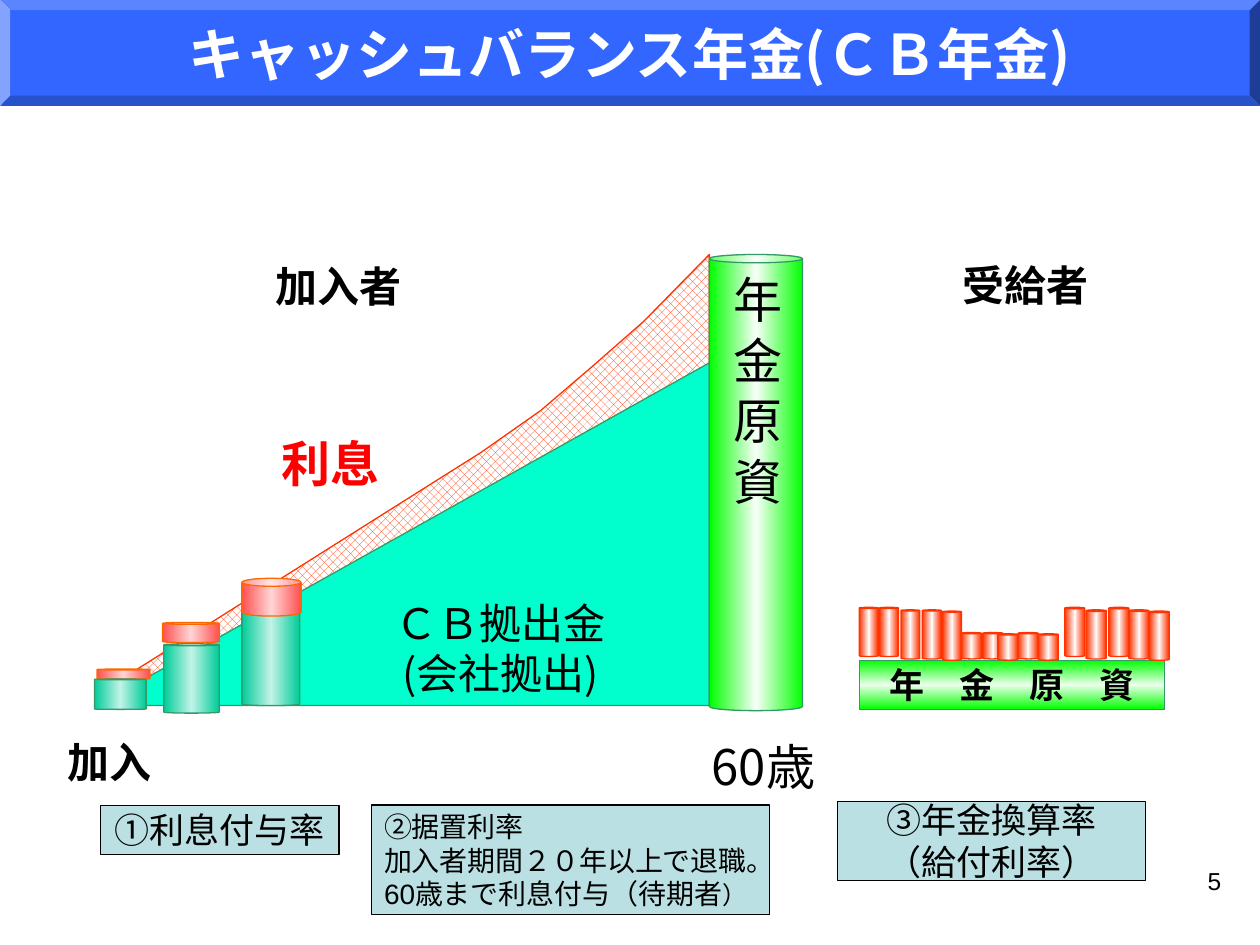
from copy import deepcopy
from dataclasses import dataclass

from lxml import etree
from pptx import Presentation
from pptx.dml.color import RGBColor
from pptx.enum import dml, shapes, text
from pptx.oxml import ns
from pptx.util import Inches, Pt

SANS, ARIAL = "Noto Sans CJK JP", "Arial"
HEX = {
    "blue": "3366FF", "white": "FFFFFF", "black": "000000", "red": "FF0000",
    "mint": "00FFCC", "pale": "BBE0E3", "edge": "339966", "rust": "FF6600",
    "lime": "00FF00", "teal": "00CC99", "rose": "FF5050", "flame": "FF3300",
    "lime_lit": "F8FFF8", "bar_lit": "EBFFEB", "teal_lit": "C2F3E7",
    "rose_lit": "FFD5D5", "flame_lit": "FFF9F8",
}
KIND = shapes.MSO_SHAPE
LEFT, MID, RIGHT = text.PP_ALIGN.LEFT, text.PP_ALIGN.CENTER, text.PP_ALIGN.RIGHT


@dataclass
class Box:
    x: float
    y: float
    w: float
    h: float

    def emu(self) -> list:
        return [Inches(v) for v in (self.x, self.y, self.w, self.h)]


@dataclass
class Style:
    size: float
    font: str = SANS
    color: str = "black"
    bold: bool = False
    align: text.PP_ALIGN = LEFT


@dataclass
class Paint:
    fill: str
    line: str = ""
    lit: str = ""
    angle: int = 0


LIME = Paint("lime", "edge", "lime_lit")
BAR = Paint("lime", "edge", "bar_lit", 90)
TEAL = Paint("teal", "edge", "teal_lit")
ROSE = Paint("rose", "rust", "rose_lit")
FLAME = Paint("flame", "flame", "flame_lit")
PALE = Paint("pale", "black")


def tint(name: str) -> RGBColor:
    return RGBColor.from_string(HEX[name])


def edge(shape, name: str) -> None:
    shape.shadow.inherit = False
    if name:
        shape.line.color.rgb = tint(name)
        shape.line.width = Pt(0.75)
    else:
        shape.line.fill.background()


def blend(fill, paint: Paint) -> None:
    """Three-stop gradient with a bright middle."""
    fill.gradient()
    fill.gradient_angle = paint.angle
    last = fill.gradient_stops[-1]._gs
    last.addprevious(deepcopy(last))
    names = (paint.fill, paint.lit, paint.fill)
    for stop, name, pos in zip(fill.gradient_stops, names, (0, 0.5, 1)):
        stop.color.rgb = tint(name)
        stop.position = pos


def solid(slide, kind: KIND, box: Box, paint: Paint, adj: float = 0):
    shape = slide.shapes.add_shape(kind, *box.emu())
    if adj:
        shape.adjustments[0] = adj
    if paint.lit:
        blend(shape.fill, paint)
    else:
        shape.fill.solid()
        shape.fill.fore_color.rgb = tint(paint.fill)
    edge(shape, paint.line)
    return shape


def add_run(para, words: str, style: Style) -> None:
    run = para.add_run()
    run.text = words
    font = run.font
    font.size, font.bold, font.name = Pt(style.size), style.bold, style.font
    font.color.rgb = tint(style.color)
    face = etree.SubElement(font._element, ns.qn("a:ea"))
    face.set("typeface", SANS)


def write(shape, lines: list, style: Style, wrap: bool = False) -> None:
    frame = shape.text_frame
    frame.word_wrap = wrap
    for i, line in enumerate(lines):
        para = frame.add_paragraph() if i else frame.paragraphs[0]
        para.alignment = style.align
        add_run(para, line, style)


def label(slide, box: Box, lines: list, style: Style) -> None:
    write(slide.shapes.add_textbox(*box.emu()), lines, style, True)


def hatch(slide, points: list) -> None:
    dots = [(Inches(x), Inches(y)) for x, y in points]
    pen = slide.shapes.build_freeform(*dots[0], scale=1.0)
    pen.add_line_segments(dots[1:], close=True)
    shape = pen.convert_to_shape()
    shape.fill.patterned()
    shape.fill.pattern = dml.MSO_PATTERN.PERCENT_50
    shape.fill.fore_color.rgb = tint("flame")
    shape.fill.back_color.rgb = tint("white")
    edge(shape, "flame")


def growth(slide) -> None:
    # Interest above the contributions
    hatch(slide, [(0.98, 5.38), (5.63, 5.38), (5.63, 2.02), (5.11, 2.55),
                  (4.7, 2.91), (4.29, 3.26), (3.82, 3.59)])
    wedge = solid(slide, KIND.RIGHT_TRIANGLE, Box(0.77, 2.88, 4.86, 2.72),
                  Paint("mint", "edge"))
    wedge.element.spPr.find(ns.qn("a:xfrm")).set("flipH", "1")

    # Fund at age 60
    fund = solid(slide, KIND.CAN, Box(5.63, 2.02, 0.74, 3.62), LIME, 0.089)
    write(fund, ["年 金 原 資"], Style(28, align=MID))
    fund.text_frame.vertical_anchor = text.MSO_ANCHOR.MIDDLE
    fund.text_frame._txBody.bodyPr.set("vert", "eaVert")

    # Yearly balances: contribution can with an interest can on top
    for box, paint, adj in (
        (Box(1.3, 5.11, 0.44, 0.55), TEAL, 0.035),
        (Box(1.29, 4.94, 0.45, 0.16), ROSE, 0.095),
        (Box(1.92, 4.82, 0.46, 0.78), TEAL, 0.052),
        (Box(1.92, 4.59, 0.47, 0.3), ROSE, 0.211),
        (Box(0.77, 5.31, 0.42, 0.08), ROSE, 0.095),
        (Box(0.75, 5.39, 0.41, 0.24), TEAL, 0.022),
    ):
        solid(slide, KIND.CAN, box, paint, adj)


def payout(slide) -> None:
    bar = solid(slide, KIND.RECTANGLE, Box(6.82, 5.24, 2.42, 0.39), BAR)
    write(bar, ["年　金　原　資"], Style(20, bold=True, align=MID))

    # Pension payments: tall, short, tall
    for w, h, adj, spots in (
        (0.15, 0.39, 0.061, ((6.82, 4.82), (6.98, 4.82), (7.15, 4.84),
                             (7.32, 4.84), (7.48, 4.85))),
        (0.16, 0.21, 0.065, ((7.63, 5.02), (7.8, 5.02), (7.92, 5.03),
                             (8.08, 5.02), (8.24, 5.03))),
        (0.16, 0.39, 0.077, ((8.62, 4.84), (8.96, 4.84), (8.45, 4.82),
                             (8.8, 4.82), (9.12, 4.85))),
    ):
        for x, y in spots:
            solid(slide, KIND.CAN, Box(x, y, w, h), FLAME, adj)


def main() -> None:
    deck = Presentation()
    deck.slide_width, deck.slide_height = Inches(10), Inches(7.5)
    slide = deck.slides.add_slide(deck.slide_layouts[5])

    growth(slide)
    payout(slide)

    # Labels
    head = Style(24, ARIAL, bold=True)
    for box, lines, style in (
        (Box(2.09, 2.02, 1.58, 0.5), ["加入者"], head),
        (Box(7.54, 2.01, 1.5, 0.5), ["受給者"], head),
        (Box(0.44, 5.8, 1.1, 0.5), ["加入"], Style(24, bold=True)),
        (Box(5.55, 5.8, 1.12, 0.57), ["60歳"], Style(28)),
        (Box(2, 3.39, 1.11, 0.57), ["利息"], Style(28, SANS, "red", True, RIGHT)),
        (Box(2.95, 4.69, 2.05, 0.91), ["ＣＢ拠出金", "(会社拠出)"],
         Style(24, align=MID)),
        (Box(9.25, 6.82, 0.54, 0.52), ["5"], Style(14, ARIAL, align=RIGHT)),
    ):
        label(slide, box, lines, style)

    # Rate notes
    mid, left = Style(20, ARIAL, align=MID), Style(16, ARIAL)
    for box, lines, style in (
        (Box(0.8, 6.39, 1.89, 0.39), ["①利息付与率"], mid),
        (Box(6.65, 6.36, 2.44, 0.63), ["③年金換算率", "（給付利率）"], mid),
        (Box(2.95, 6.39, 3.16, 0.87),
         ["②据置利率", "加入者期間２０年以上で退職。", "60歳まで利息付与（待期者"], left),
    ):
        note = solid(slide, KIND.RECTANGLE, box, PALE)
        write(note, lines, style)
    add_run(note.text_frame.paragraphs[-1], "）", Style(14, ARIAL))

    # Title on its bevelled band
    band = Box(0, 0, 10, 0.84)
    solid(slide, KIND.BEVEL, band, Paint("blue"), 0.097)
    title = slide.shapes.title
    title.left, title.top, title.width, title.height = band.emu()
    write(title, ["キャッシュバランス年金(ＣＢ年金)"],
          Style(32, SANS, "white", True, MID))
    slide.shapes.element.append(title.element)

    deck.save("out.pptx")


if __name__ == "__main__":
    main()
